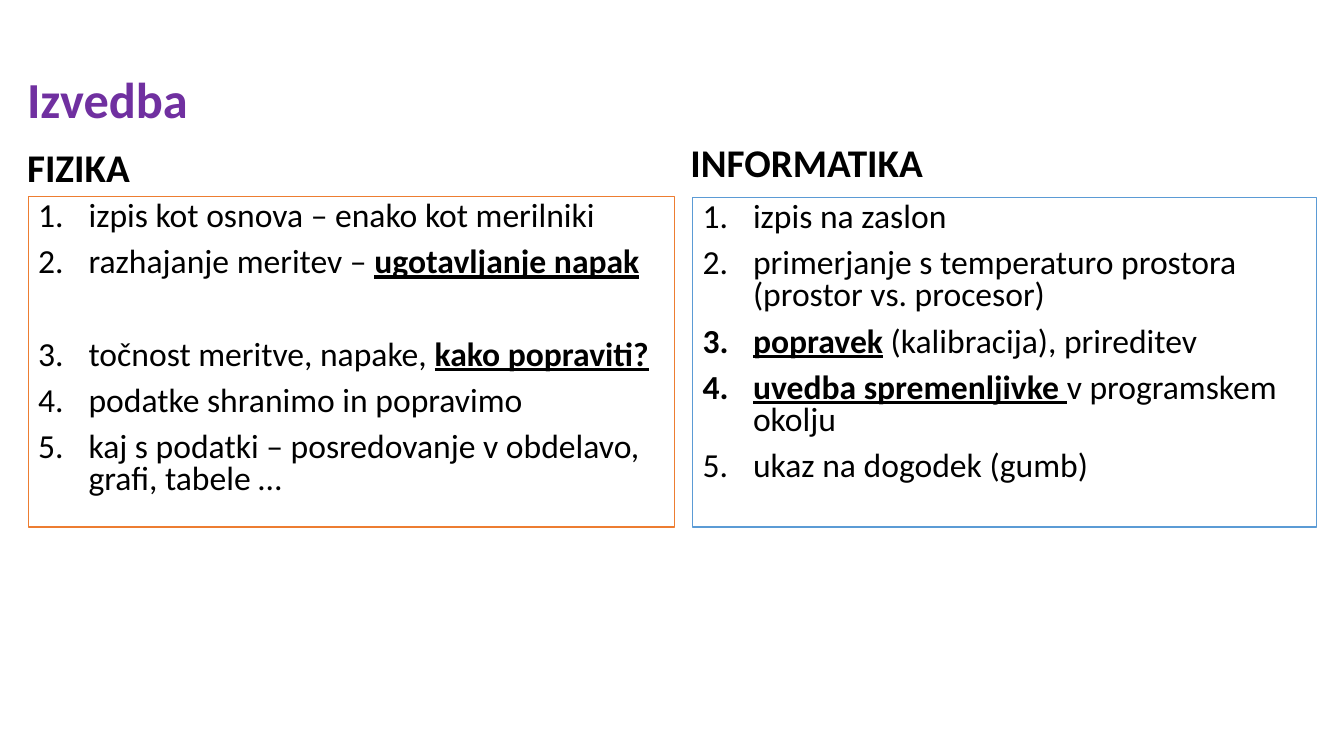
from dataclasses import dataclass

from lxml.etree import SubElement
from pptx import Presentation
from pptx.dml.color import RGBColor
from pptx.enum.shapes import MSO_SHAPE as SHAPE
from pptx.enum.text import MSO_ANCHOR as ANCHOR, PP_ALIGN as ALIGN
from pptx.oxml.ns import qn
from pptx.slide import Slide
from pptx.text.text import _Paragraph as Paragraph
from pptx.util import Inches, Pt

FONT = "Calibri"
BLACK = "000000"
PURPLE = "7030A0"
ORANGE = "ED7D31"
BLUE = "5B9BD5"
WHITE = "FFFFFF"


@dataclass
class Box:
    left: float
    top: float
    width: float
    height: float

    def lengths(self) -> list[Inches]:
        return [Inches(n) for n in (self.left, self.top, self.width, self.height)]


@dataclass
class Run:
    text: str
    key: bool = False  # bold and underlined


@dataclass
class Item:
    runs: list[Run]
    space_before: float = 10


@dataclass
class Heading:
    text: str
    box: Box
    size: int
    color: str = BLACK


@dataclass
class NumberedList:
    box: Box
    line: str
    items: list[Item]
    fill: str | None = None


HEADINGS = [
    Heading("Izvedba", Box(0.17, 0.17, 12.99, 1.16), 36, PURPLE),
    Heading("FIZIKA", Box(0.17, 1.39, 6.41, 0.55), 28),
    Heading("INFORMATIKA", Box(6.75, 1.34, 6.41, 0.55), 28),
]

LISTS = [
    NumberedList(Box(6.87, 1.96, 6.19, 3.27), BLUE, [
        Item([Run("izpis na zaslon")]),
        Item([Run("primerjanje s temperaturo prostora (prostor vs. procesor)")]),
        Item([Run("popravek", True), Run(" (kalibracija), prireditev")]),
        Item([Run("uvedba spremenljivke ", True), Run("v programskem okolju")]),
        Item([Run("ukaz na dogodek (gumb)")]),
    ]),
    NumberedList(Box(0.28, 1.95, 6.41, 3.28), ORANGE, [
        Item([Run("izpis kot osnova – enako kot merilniki")]),
        Item([Run("razhajanje meritev – "), Run("ugotavljanje napak", True)]),
        Item([Run("točnost meritve, napake, "), Run("kako popraviti?", True)],
             space_before=43),
        Item([Run("podatke shranimo in popravimo")]),
        Item([Run("kaj s podatki – posredovanje v obdelavo, grafi, tabele …")]),
    ], WHITE),
]


def rgb(color: str) -> RGBColor:
    return RGBColor.from_string(color)


def add_run(p: Paragraph, text: str, size: int, color: str, bold: bool,
            underline: bool = False) -> None:
    r = p.add_run()
    r.text = text
    r.font.name = FONT
    r.font.size = Pt(size)
    r.font.bold = bold
    r.font.underline = underline
    r.font.color.rgb = rgb(color)


def number(p: Paragraph) -> None:
    """Give the paragraph a hanging automatic number."""
    pPr = p._p.get_or_add_pPr()
    pPr.set("marL", str(Inches(0.5)))
    pPr.set("indent", str(Inches(-0.5)))
    SubElement(pPr, qn("a:buFont"), typeface="+mj-lt")
    SubElement(pPr, qn("a:buAutoNum"), type="arabicPeriod")


def add_heading(s: Slide, heading: Heading) -> None:
    tf = s.shapes.add_textbox(*heading.box.lengths()).text_frame
    tf.word_wrap = True
    tf.vertical_anchor = ANCHOR.BOTTOM
    p = tf.paragraphs[0]
    p.line_spacing = 0.9
    add_run(p, heading.text, heading.size, heading.color, True)


def add_list(s: Slide, numbered: NumberedList) -> None:
    sp = s.shapes.add_shape(SHAPE.RECTANGLE, *numbered.box.lengths())
    sp.shadow.inherit = False
    sp.line.color.rgb = rgb(numbered.line)
    sp.line.width = Pt(1)
    if numbered.fill:
        sp.fill.solid()
        sp.fill.fore_color.rgb = rgb(numbered.fill)
    else:
        sp.fill.background()
    tf = sp.text_frame
    tf.word_wrap = True
    tf.vertical_anchor = ANCHOR.TOP
    for i, item in enumerate(numbered.items):
        p = tf.add_paragraph() if i else tf.paragraphs[0]
        p.alignment = ALIGN.LEFT
        p.line_spacing = 0.8
        p.space_before = Pt(item.space_before if i else 0)
        number(p)
        for run in item.runs:
            add_run(p, run.text, 24, BLACK, run.key, run.key)


def main() -> None:
    prs = Presentation()
    prs.slide_width = Inches(13.33)
    prs.slide_height = Inches(7.5)
    s = prs.slides.add_slide(prs.slide_layouts[6])
    for heading in HEADINGS:
        add_heading(s, heading)
    for numbered in LISTS:
        add_list(s, numbered)
    prs.save("out.pptx")


if __name__ == "__main__":
    main()
